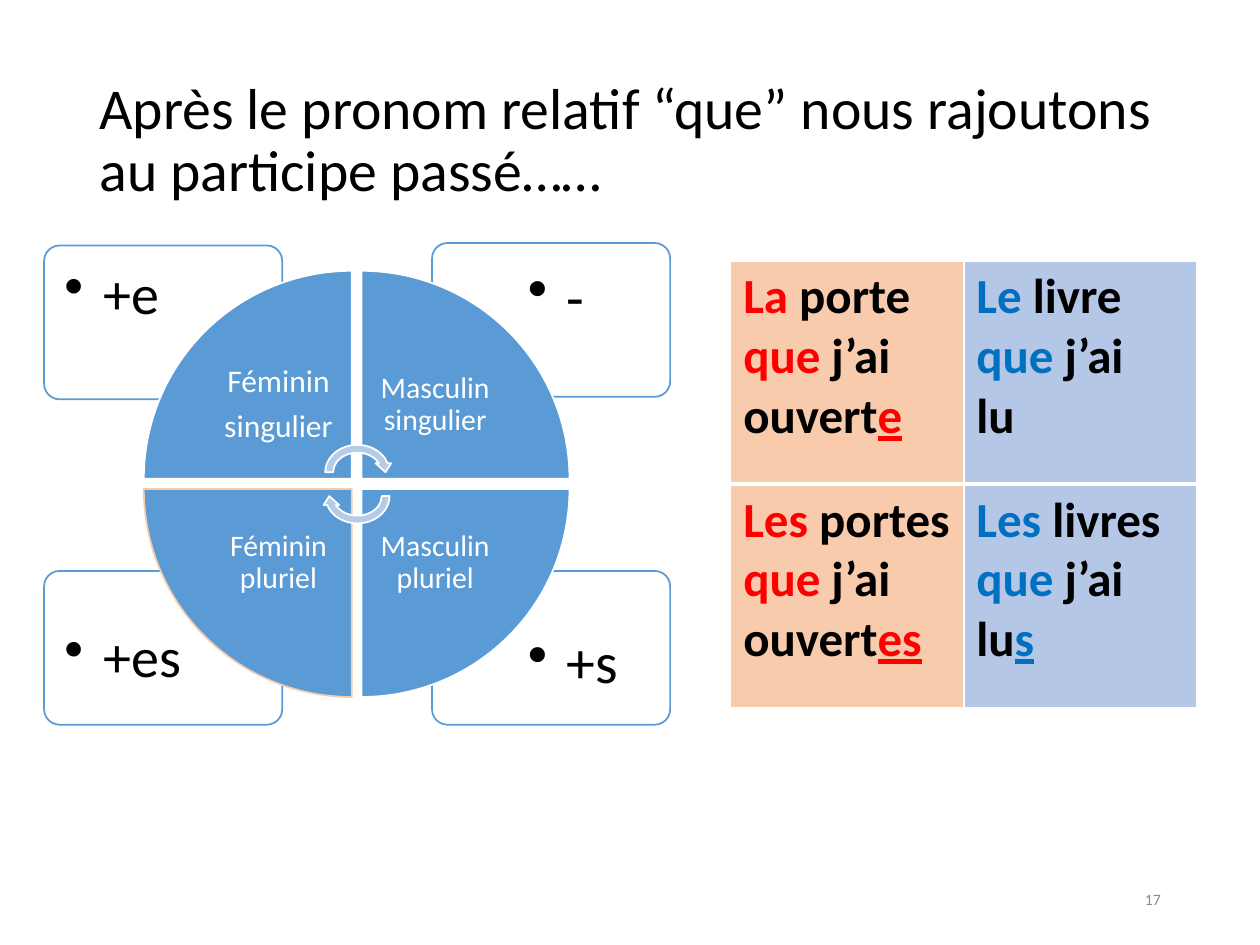
"""Build a slide on past participle agreement after the relative pronoun "que"."""
from lxml import etree
from pptx import Presentation, util as u
from pptx.dml.color import RGBColor
from pptx.enum import shapes, text
from pptx.oxml.ns import qn

BLACK = RGBColor(0x00, 0x00, 0x00)
WHITE = RGBColor(0xFF, 0xFF, 0xFF)
GREY = RGBColor(0x8C, 0x8C, 0x8C)
BLUE = RGBColor(0x5B, 0x9B, 0xD5)
ARROW_BLUE = RGBColor(0xB5, 0xCB, 0xE7)
PEACH = RGBColor(0xF8, 0xCB, 0xAD)
PALE_BLUE = RGBColor(0xB4, 0xC7, 0xE7)
RED = RGBColor(0xFF, 0x00, 0x00)
DEEP_BLUE = RGBColor(0x00, 0x70, 0xC0)
FONT = "Calibri"

TITLE = "Après le pronom relatif “que” nous rajoutons au participe passé……"
PAGE = "17"
QUADRANTS = [
    {"col": 0, "row": 0, "angle": 0, "ending": "+e", "label": ["Féminin", "singulier"], "size": 18},
    {"col": 1, "row": 0, "angle": 90, "ending": "-", "label": ["Masculin singulier"], "size": 17},
    {"col": 1, "row": 1, "angle": 180, "ending": "+s", "label": ["Masculin pluriel"], "size": 17},
    {"col": 0, "row": 1, "angle": 270, "ending": "+es", "label": ["Féminin pluriel"], "size": 17},
]
PLAIN, ACCENT, ENDING = range(3)
EXAMPLES = [
    [
        [[("La", ACCENT), (" porte ", PLAIN), ("que", ACCENT), (" j’ai ouvert", PLAIN), ("e", ENDING)]],
        [[("Le", ACCENT), (" livre ", PLAIN), ("que", ACCENT), (" j’ai", PLAIN)], [("lu", PLAIN)]],
    ],
    [
        [[("Les", ACCENT), (" portes ", PLAIN), ("que", ACCENT), (" j’ai ouvert", PLAIN), ("es", ENDING)]],
        [[("Les", ACCENT), (" livres ", PLAIN), ("que", ACCENT), (" j’ai lu", PLAIN), ("s", ENDING)]],
    ],
]
COLUMN_COLOURS = [(PEACH, RED), (PALE_BLUE, DEEP_BLUE)]


def style(font, size, colour, bold=False):
    font.name, font.size, font.bold = FONT, u.Pt(size), bold
    font.color.rgb = colour


def add_shape(s, kind, box, fill, line, angle=0):
    sp = s.shapes.add_shape(kind, *map(u.Cm, box))
    sp.shadow.inherit = False
    sp.fill.solid()
    sp.fill.fore_color.rgb = fill
    sp.line.color.rgb = line
    sp.line.width = u.Pt(1)
    sp.rotation = angle
    return sp


def add_text(s, box, lines, size, colour, align, anchor, inset=None, after=0, bullet=False):
    tf = s.shapes.add_textbox(*map(u.Cm, box)).text_frame
    tf.word_wrap = True
    tf.vertical_anchor = anchor
    if inset is not None:
        tf.margin_left = tf.margin_right = tf.margin_top = tf.margin_bottom = u.Cm(inset)
    tf.text = "\n".join(lines)
    for p in tf.paragraphs:
        if bullet:
            pPr = p._p.get_or_add_pPr()
            pPr.set("marL", str(u.Cm(0.79)))
            pPr.set("indent", str(u.Cm(-0.79)))
            etree.SubElement(pPr, qn("a:buChar")).set("char", "•")
        p.alignment = align
        p.line_spacing = 0.9
        p.space_after = u.Pt(after)
        for r in p.runs:
            style(r.font, size, colour)


def add_wheel(s):
    for q in QUADRANTS:
        col, row = q["col"], q["row"]
        top = 11.51 if row else (4.9 if col else 4.95)
        sp = add_shape(s, shapes.MSO_SHAPE.ROUNDED_RECTANGLE,
                       (0.89 + 7.82 * col, top, 4.8, 3.1), WHITE, BLUE)
        sp.adjustments[0] = 0.1
        add_text(s, (0.97 + 9.24 * col, top + (0.84 if row else 0.08), 3.23, 2.18),
                 [q["ending"]], 33 if col else 32, BLACK, text.PP_ALIGN.LEFT,
                 text.MSO_ANCHOR.TOP, 0.43 if col else 0.33, 5, bullet=True)
    for q in QUADRANTS:
        col, row = q["col"], q["row"]
        add_shape(s, shapes.MSO_SHAPE.PIE_WEDGE,
                  (2.9 + 4.39 * col, 5.46 + 4.4 * row, 4.19, 4.19), BLUE,
                  PEACH if q["angle"] == 270 else WHITE, q["angle"])
        add_text(s, (4.13 + 3.16 * col, 6.68 + 3.18 * row, 2.97, 2.97), q["label"],
                 q["size"], WHITE, text.PP_ALIGN.CENTER, text.MSO_ANCHOR.MIDDLE, 0.34, 6.3)
    for top, angle in ((8.89, 0), (9.37, 180)):
        add_shape(s, shapes.MSO_SHAPE.CIRCULAR_ARROW, (6.48, top, 1.45, 1.26),
                  ARROW_BLUE, WHITE, angle)


def set_borders(cell, row):
    tcPr = cell._tc.get_or_add_tcPr()
    thick = "lnT" if row else "lnB"
    for side in ("lnL", "lnR", "lnT", "lnB"):
        ln = etree.SubElement(tcPr, qn("a:" + side), w=str(u.Pt(3 if side == thick else 1)))
        fill = etree.SubElement(ln, qn("a:solidFill"))
        etree.SubElement(fill, qn("a:srgbClr")).set("val", str(WHITE))


def add_examples(s):
    table = s.shapes.add_table(2, 2, *map(u.Cm, (14.73, 5.26, 9.4, 9))).table
    for row, cells in enumerate(EXAMPLES):
        for col, lines in enumerate(cells):
            cell = table.cell(row, col)
            background, accent = COLUMN_COLOURS[col]
            set_borders(cell, row)
            cell.fill.solid()
            cell.fill.fore_color.rgb = background
            tf = cell.text_frame
            for i, runs in enumerate(lines):
                p = tf.add_paragraph() if i else tf.paragraphs[0]
                for words, role in runs:
                    r = p.add_run()
                    r.text = words
                    style(r.font, 28, BLACK if role == PLAIN else accent, bold=True)
                    r.font.underline = role == ENDING


def main():
    prs = Presentation()
    prs.slide_width, prs.slide_height = u.Cm(25.4), u.Cm(19.05)
    s = prs.slides.add_slide(prs.slide_layouts[5])
    title = s.shapes.title
    title.left, title.top, title.width, title.height = map(u.Cm, (1.75, 1.02, 21.9, 3.68))
    tf = title.text_frame
    tf.text = TITLE
    tf.vertical_anchor = text.MSO_ANCHOR.MIDDLE
    p = tf.paragraphs[0]
    p.alignment = text.PP_ALIGN.LEFT
    p.line_spacing = 0.9
    style(p.runs[0].font, 33, BLACK)
    add_wheel(s)
    add_examples(s)
    add_text(s, (17.93, 17.65, 5.72, 1.02), [PAGE], 9, GREY,
             text.PP_ALIGN.RIGHT, text.MSO_ANCHOR.MIDDLE)
    prs.save("out.pptx")


if __name__ == "__main__":
    main()
